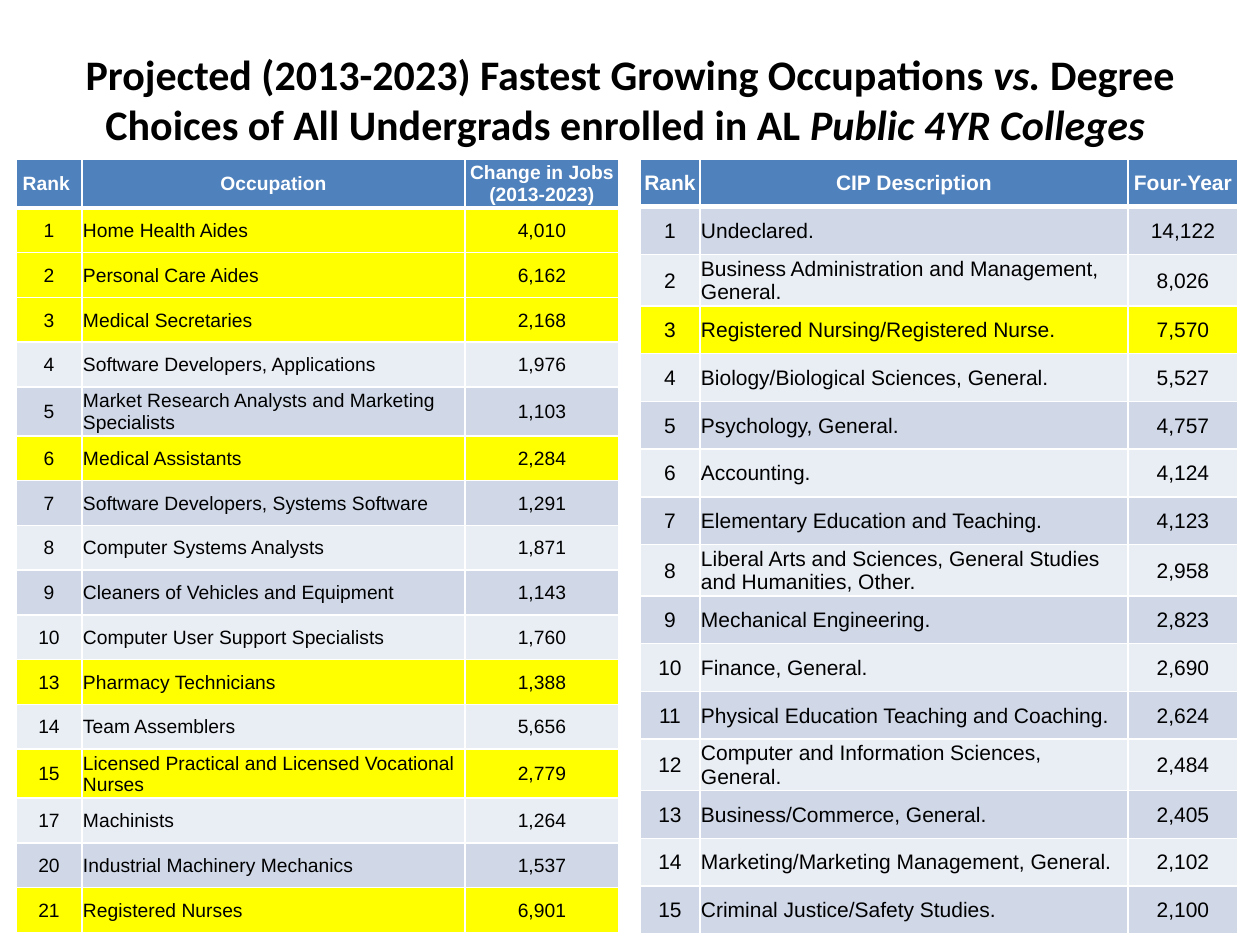
import pptx
import pptx.util
import pptx.dml.color
import pptx.enum.text
import pptx.oxml

PX = 914400 / 126
BLUE, DARK, LIGHT, MARK = "4F81BD", "D0D8E8", "E9EDF4", "FFFF00"
CENTER = pptx.enum.text.PP_ALIGN.CENTER
LEFT = pptx.enum.text.PP_ALIGN.LEFT
MIDDLE = pptx.enum.text.MSO_ANCHOR.MIDDLE

TITLE = [
    ("Projected (2013-2023) Fastest Growing Occupations ", False),
    ("vs.", True),
    (" Degree Choices of All Undergrads enrolled in AL ", False),
    ("Public 4YR Colleges ", True),
]

JOBS = [
    ("Rank ", "Occupation", "Change in Jobs (2013-2023)"),
    ("1", "Home Health Aides", "4,010"),
    ("2", "Personal Care Aides", "6,162"),
    ("3", "Medical Secretaries", "2,168"),
    ("4", "Software Developers, Applications", "1,976"),
    ("5", "Market Research Analysts and Marketing Specialists", "1,103"),
    ("6", "Medical Assistants", "2,284"),
    ("7", "Software Developers, Systems Software", "1,291"),
    ("8", "Computer Systems Analysts", "1,871"),
    ("9", "Cleaners of Vehicles and Equipment", "1,143"),
    ("10", "Computer User Support Specialists", "1,760"),
    ("13", "Pharmacy Technicians", "1,388"),
    ("14", "Team Assemblers", "5,656"),
    ("15", "Licensed Practical and Licensed Vocational Nurses", "2,779"),
    ("17", "Machinists", "1,264"),
    ("20", "Industrial Machinery Mechanics", "1,537"),
    ("21", "Registered Nurses", "6,901"),
]

DEGREES = [
    ("Rank", "CIP Description", "Four-Year"),
    ("1", "Undeclared.", "14,122"),
    ("2", "Business Administration and Management, General.", "8,026"),
    ("3", "Registered Nursing/Registered Nurse.", "7,570"),
    ("4", "Biology/Biological Sciences, General.", "5,527"),
    ("5", "Psychology, General.", "4,757"),
    ("6", "Accounting.", "4,124"),
    ("7", "Elementary Education and Teaching.", "4,123"),
    ("8", "Liberal Arts and Sciences, General Studies and Humanities, Other.",
     "2,958"),
    ("9", "Mechanical Engineering.", "2,823"),
    ("10", "Finance, General.", "2,690"),
    ("11", "Physical Education Teaching and Coaching.", "2,624"),
    ("12", "Computer and Information Sciences, General.", "2,484"),
    ("13", "Business/Commerce, General.", "2,405"),
    ("14", "Marketing/Marketing Management, General.", "2,102"),
    ("15", "Criminal Justice/Safety Studies.", "2,100"),
]


def emu(px):
    return pptx.util.Emu(round(px * PX))


def color(code):
    return pptx.dml.color.RGBColor.from_string(code)


def add_run(para, text, size, face, code, bold=False, italic=False):
    run = para.add_run()
    run.text = text
    font = run.font
    font.size, font.name = pptx.util.Pt(size), face
    font.bold, font.italic = bold, italic
    font.color.rgb = color(code)


def add_title(slide, box):
    frame = slide.shapes.add_textbox(*map(emu, box)).text_frame
    frame.word_wrap = True
    frame.vertical_anchor = MIDDLE
    para = frame.paragraphs[0]
    para.alignment = CENTER
    for text, italic in TITLE:
        add_run(para, text, 24, "Calibri", "000000", True, italic)


def set_edges(cell, top, bottom):
    """Draw white cell borders; top and bottom are widths in points."""
    space = 'xmlns:a="http://schemas.openxmlformats.org/drawingml/2006/main"'
    props = cell._tc.get_or_add_tcPr()
    for side, width in zip("LRTB", (1, 1, top, bottom)):
        props.append(pptx.oxml.parse_xml(
            f'<a:ln{side} {space} w="{pptx.util.Pt(width)}"><a:solidFill>'
            f'<a:srgbClr val="FFFFFF"/></a:solidFill></a:ln{side}>'))


def fill_cell(cell, text, size, row, align, back):
    head = row == 0
    set_edges(cell, 3 if row == 1 else 1, 3 if head else 1)
    cell.fill.solid()
    cell.fill.fore_color.rgb = color(back)
    cell.vertical_anchor = MIDDLE
    cell.margin_left = cell.margin_right = cell.margin_top = emu(1)
    cell.margin_bottom = 0
    para = cell.text_frame.paragraphs[0]
    para.alignment = align
    add_run(para, text, size, "Arial", "FFFFFF" if head else "000000", head)


def add_ranks(slide, box, data, cols, size, tall, wraps, marked):
    """Add a ranking; wraps are the rows of height tall, others share the rest."""
    table = slide.shapes.add_table(
        len(data), len(cols), *map(emu, box)).table
    for col, width in zip(table.columns, cols):
        col.width = emu(width)
    plain = (box[3] - tall * len(wraps)) / (len(data) - len(wraps))
    for row, texts in enumerate(data):
        table.rows[row].height = emu(tall if row in wraps else plain)
        back = DARK if row % 2 else LIGHT
        if row == 0:
            back = BLUE
        elif row in marked:
            back = MARK
        for col, text in enumerate(texts):
            align = LEFT if row and col == 1 else CENTER
            fill_cell(table.cell(row, col), text, size, row, align, back)


def main():
    deck = pptx.Presentation()
    deck.slide_width, deck.slide_height = emu(1260), emu(945)
    slide = deck.slides.add_slide(deck.slide_layouts[6])
    add_title(slide, (63, 38, 1134, 121))
    add_ranks(slide, (16, 159, 603, 774), JOBS, (66, 383, 154), 11,
              49, {0, 5, 13}, {1, 2, 3, 6, 11, 13, 16})
    add_ranks(slide, (640, 159, 598, 774), DEGREES, (60, 428, 110), 12,
              51, {2, 8, 12}, {3})
    deck.save("out.pptx")


if __name__ == "__main__":
    main()
